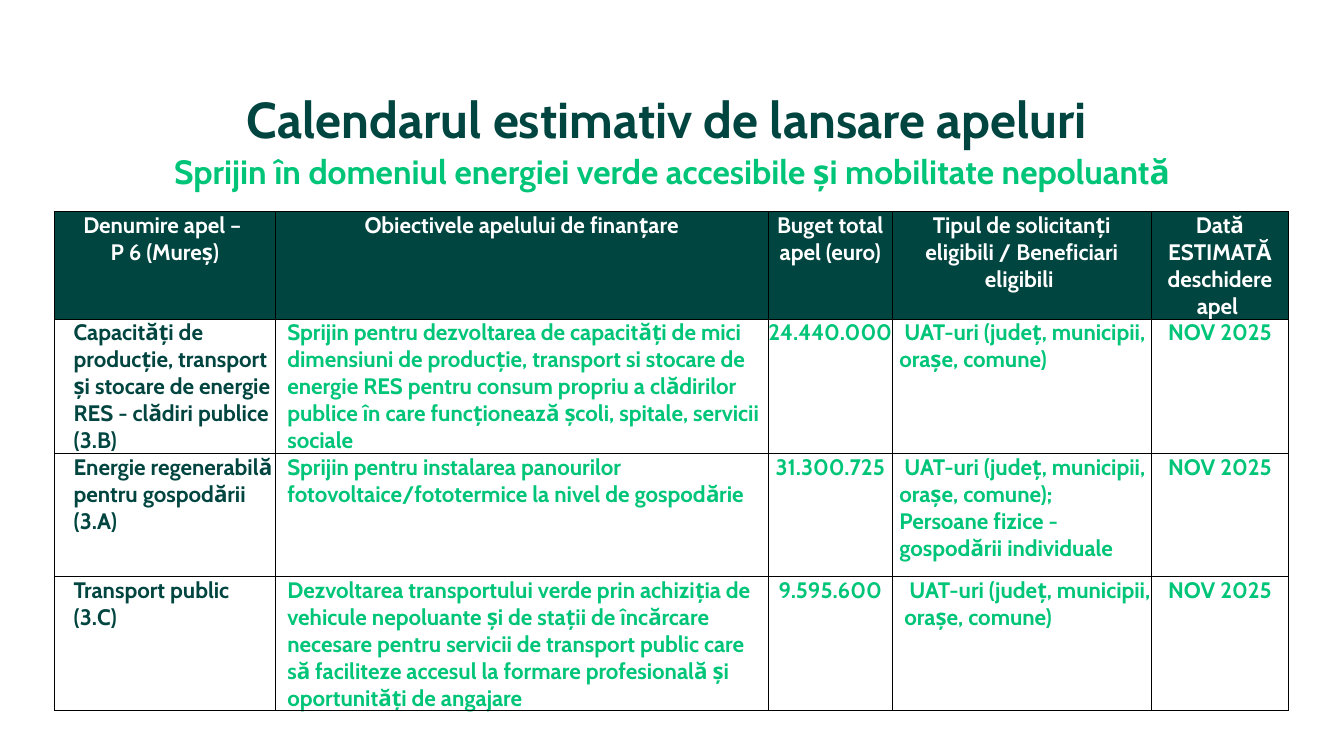
import pptx
import pptx.util
import pptx.dml.color
import pptx.enum.text
from lxml import etree
from pptx.oxml.ns import qn

FONT = "Cabin"
DARK, GREEN, WHITE, BLACK = "004540", "00C578", "FFFFFF", "000000"
CENTER = pptx.enum.text.PP_ALIGN.CENTER
LEFT = pptx.enum.text.PP_ALIGN.LEFT
MIDDLE = pptx.enum.text.MSO_ANCHOR.MIDDLE
TOP = pptx.enum.text.MSO_ANCHOR.TOP

TITLE = "Calendarul estimativ de lansare apeluri "
SUBTITLE = "Sprijin în domeniul energiei verde accesibile și mobilitate nepoluantă"
HEADER = [
    "Denumire apel – \nP 6 (Mureș)",
    "Obiectivele apelului de finanțare",
    "Buget total apel (euro)",
    "Tipul de solicitanți eligibili / Beneficiari eligibili ",
    "Dată ESTIMATĂ deschidere apel ",
]
OPENING = "NOV 2025"
CALLS = [
    ["Capacități de producție, transport și stocare de energie RES - clădiri publice (3.B)",
     "Sprijin pentru dezvoltarea de capacități de mici dimensiuni de producție, transport "
     "si stocare de energie RES pentru consum propriu a clădirilor publice în care "
     "funcționează școli, spitale, servicii sociale",
     "24.440.000", "UAT-uri (județ, municipii, orașe, comune)", OPENING],
    ["Energie regenerabilă pentru gospodării (3.A)",
     "Sprijin pentru instalarea panourilor fotovoltaice/fototermice la nivel de gospodărie",
     "31.300.725",
     "UAT-uri (județ, municipii, orașe, comune);\nPersoane fizice - gospodării individuale",
     OPENING],
    ["Transport public (3.C)",
     "Dezvoltarea transportului verde prin achiziția de vehicule nepoluante și de stații "
     "de încărcare necesare pentru servicii de transport public care să faciliteze accesul "
     "la formare profesională și oportunități de angajare",
     "9.595.600", "UAT-uri (județ, municipii, orașe, comune)", OPENING],
]
COLUMN_WIDTHS = [2.19, 4.89, 1.23, 2.57, 1.36]
HEADER_HEIGHT, CALL_HEIGHT = 0.96, 1.22
# Per column: text colour, alignment, left indent
COLUMN_STYLES = [
    (DARK, LEFT, 0.19),
    (GREEN, LEFT, 0.12),
    (GREEN, CENTER, 0),
    (GREEN, LEFT, 0.07),
    (GREEN, CENTER, 0),
]
APPLICANT_COLUMN = 3
LAST_APPLICANT_INDENT = 0.12
FIRST_LINE_INDENT = 0.05


def rgb(color):
    return pptx.dml.color.RGBColor.from_string(color)


def inches(value):
    return pptx.util.Inches(value)


def format_paragraph(paragraph, size, color, align):
    paragraph.alignment = align
    for run in paragraph.runs:
        run.font.name = FONT
        run.font.size = pptx.util.Pt(size)
        run.font.bold = True
        run.font.color.rgb = rgb(color)


def add_heading(slide, text, box, size, color, anchor):
    frame = slide.shapes.add_textbox(*map(inches, box)).text_frame
    frame.word_wrap = True
    frame.vertical_anchor = anchor
    frame.text = text
    format_paragraph(frame.paragraphs[0], size, color, CENTER)
    return frame


def add_borders(cell):
    properties = cell._tc.get_or_add_tcPr()
    for position, side in enumerate(("lnL", "lnR", "lnT", "lnB")):
        line = etree.Element(qn("a:" + side), w=str(pptx.util.Pt(1)))
        fill = etree.SubElement(line, qn("a:solidFill"))
        etree.SubElement(fill, qn("a:srgbClr"), val=BLACK)
        properties.insert(position, line)


def fill_cell(cell, text, background, color, align, indent=0, first_line=0):
    cell.margin_left = cell.margin_right = cell.margin_top = cell.margin_bottom = 0
    cell.fill.solid()
    cell.fill.fore_color.rgb = rgb(background)
    add_borders(cell)
    cell.text_frame.text = text
    for number, paragraph in enumerate(cell.text_frame.paragraphs):
        format_paragraph(paragraph, 16, color, align)
        properties = paragraph._p.get_or_add_pPr()
        properties.set("marL", str(inches(indent)))
        properties.set("indent", str(inches(0 if number else first_line)))


def add_calendar(slide):
    row_heights = [HEADER_HEIGHT] + [CALL_HEIGHT] * len(CALLS)
    calendar = slide.shapes.add_table(
        len(row_heights), len(COLUMN_WIDTHS), inches(0.54), inches(2.1),
        inches(sum(COLUMN_WIDTHS)), inches(sum(row_heights))).table
    for column, width in zip(calendar.columns, COLUMN_WIDTHS):
        column.width = inches(width)
    for row, height in zip(calendar.rows, row_heights):
        row.height = inches(height)

    for column, label in enumerate(HEADER):
        fill_cell(calendar.cell(0, column), label, DARK, WHITE, CENTER)
    for row, call in enumerate(CALLS, start=1):
        for column, text in enumerate(call):
            color, align, indent = COLUMN_STYLES[column]
            first_line = 0
            if column == APPLICANT_COLUMN:
                first_line = FIRST_LINE_INDENT
                if row == len(CALLS):
                    indent = LAST_APPLICANT_INDENT
            fill_cell(calendar.cell(row, column), text, WHITE, color, align,
                      indent, first_line)


def main():
    presentation = pptx.Presentation()
    presentation.slide_width, presentation.slide_height = inches(13.33), inches(7.5)
    slide = presentation.slides.add_slide(presentation.slide_layouts[6])
    title = add_heading(slide, TITLE, (0.92, 0.88, 11.5, 0.67), 36, DARK, MIDDLE)
    title.paragraphs[0].line_spacing = 0.9
    add_calendar(slide)
    add_heading(slide, SUBTITLE, (1.21, 1.45, 10.91, 0.5), 24, GREEN, TOP)
    presentation.save("out.pptx")


if __name__ == "__main__":
    main()
